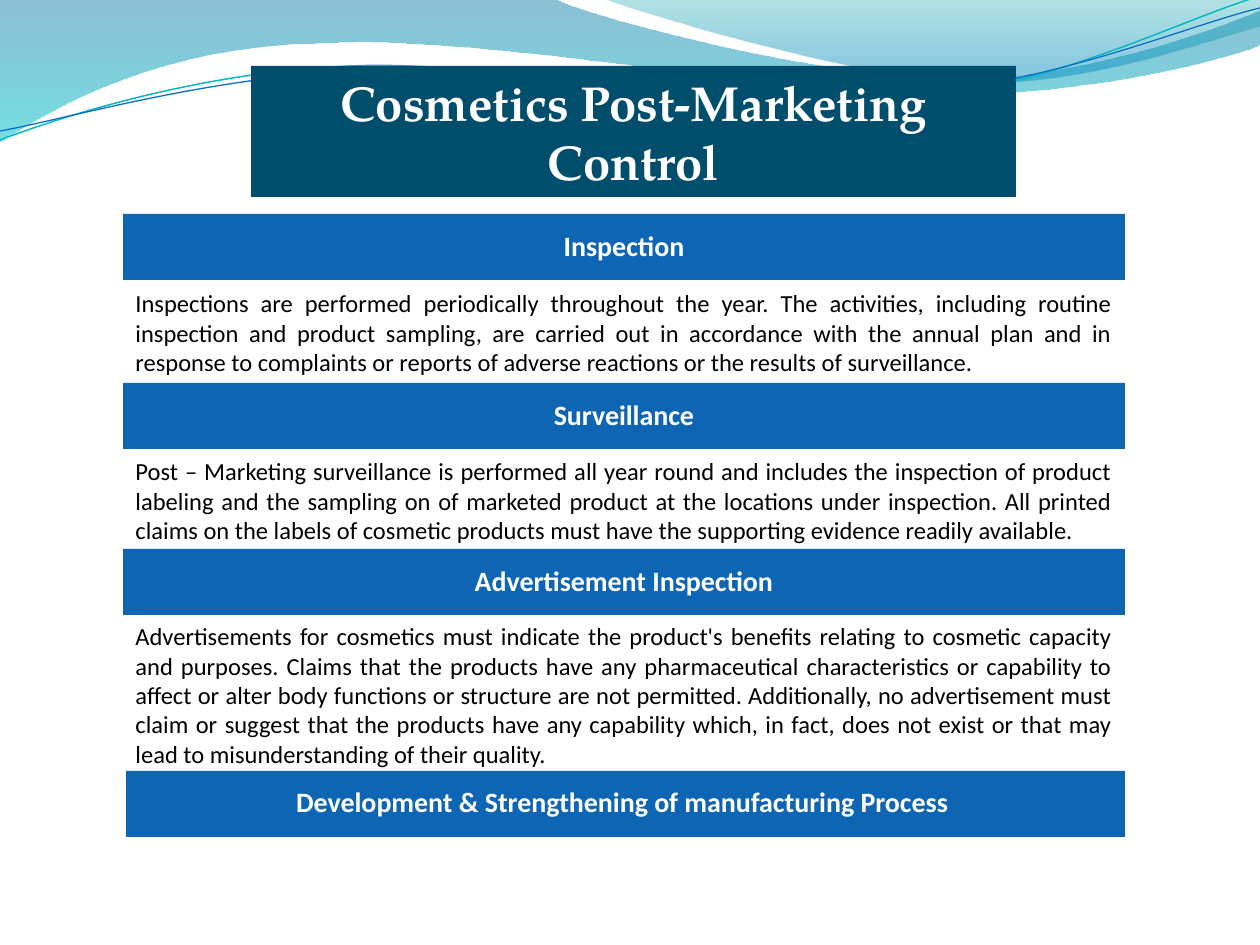
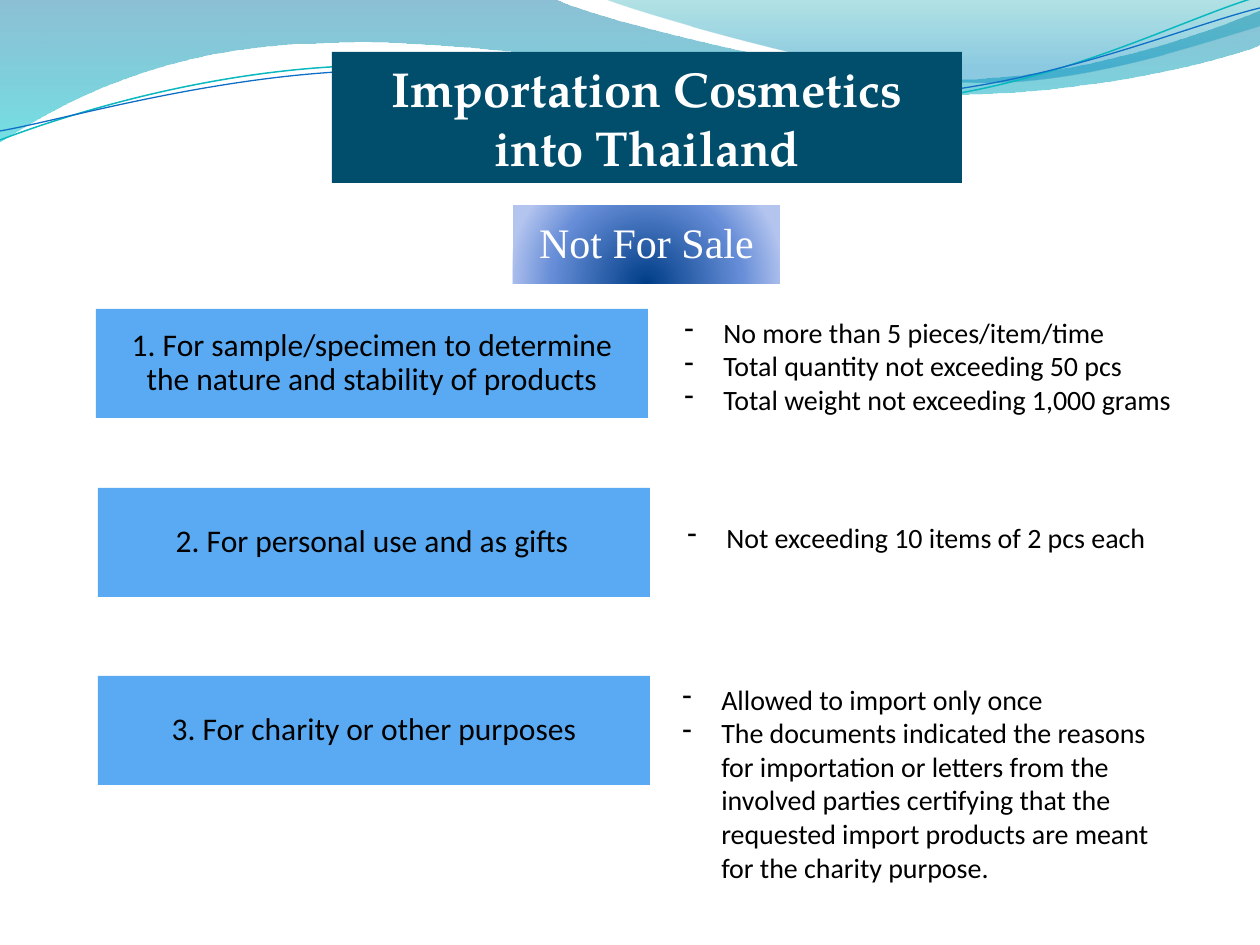
from lxml import etree
from pptx import Presentation
from pptx.dml.color import RGBColor as RGB
from pptx.enum.shapes import MSO_SHAPE as SHAPE
from pptx.enum.text import MSO_ANCHOR as ANCHOR, PP_ALIGN as ALIGN
from pptx.oxml import parse_xml
from pptx.oxml.ns import nsdecls, qn
from pptx.util import Pt

PX = 914400 / 126
WIDTH, HEIGHT = 1260, 945

COLORS = {
    "title": "004E6C", "bar": "0E65B4", "purpose": "59AAF2",
    "white": "FFFFFF", "black": "000000",
    "teal_line": "0AB8BF", "blue_line": "0F6FC6",
}
BODY, TITLE, BADGE = "Calibri", "TeX Gyre Pagella", "Times New Roman"

BANDS = [
    {"points": [(0, 0), (554, -1), (600, 21, 837, 79, 955, 79),
                (1075, 79, 1207, 33, 1260, 11), (1261, 45),
                (1239, 55, 1096, 96, 940, 94), (784, 94, 481, 35, 324, 43),
                (163, 45, 58, 105, -1, 142), (0, 0)],
     "stops": [(0, "0074A1", 45), (100, "00C6CF", 55)]},
    {"points": [(604, -1), (641, 14, 859, 78, 969, 82),
                (1079, 87, 1211, 40, 1260, 26), (1260, 0), (604, -1)],
     "stops": [(0, "00A1A9", 30), (80, "008BBF", 45)]},
]
WAVES = [
    {"points": [(0, 140), (60, 117, 199, 72, 349, 66),
                (498, 59, 747, 112, 898, 101), (1050, 89, 1182, 19, 1257, -3)],
     "color": "teal_line", "width": 0.85},
    {"points": [(0, 131), (59, 121, 207, 77, 357, 71),
                (508, 64, 752, 106, 903, 95), (1053, 84, 1186, 26, 1260, 8)],
     "color": "blue_line", "width": 0.75},
]
LINEAR = '<a:lin ang="5400000" scaled="0"/>'
RADIAL = ('<a:path path="circle"><a:fillToRect l="50000" t="130000" '
          'r="50000" b="-30000"/></a:path>')
BADGE_STOPS = [(0, "003D87", 100), (68, "668DD7", 100), (100, "B3C4EF", 100)]

CONTROL_TITLE = ("Cosmetics Post-Marketing Control", (251, 66, 765, 131))
CONTROLS = [
    ("Inspection", (123, 214, 1002, 66), 0,
     "Inspections are performed periodically throughout the year. The activities, "
     "including routine inspection and product sampling, are carried out in "
     "accordance with the annual plan and in response to complaints or reports of "
     "adverse reactions or the results of surveillance.", (123, 282, 1002, 102)),
    ("Surveillance", (123, 383, 1002, 66), 0,
     "Post – Marketing surveillance is performed all year round and includes the "
     "inspection of product labeling and the sampling on of marketed product at the "
     "locations under inspection. All printed claims on the labels of cosmetic "
     "products must have the supporting evidence readily available.",
     (123, 450, 1002, 102)),
    ("Advertisement Inspection", (123, 549, 1002, 66), 0,
     "Advertisements for cosmetics must indicate the product's benefits relating to "
     "cosmetic capacity and purposes. Claims that the products have any "
     "pharmaceutical characteristics or capability to affect or alter body functions "
     "or structure are not permitted. Additionally, no advertisement must claim or "
     "suggest that the products have any capability which, in fact, does not exist "
     "or that may lead to misunderstanding of their quality.",
     (123, 615, 1002, 161)),
    ("Development & Strengthening of manufacturing Process",
     (126, 771, 999, 66), 3, None, None),
]

IMPORT_TITLE = ("Importation Cosmetics into Thailand", (332, 52, 630, 131))
IMPORT_BADGE = ("Not For Sale", (513, 205, 267, 79))
PURPOSES = [
    ("1. For sample/specimen to determine the nature and stability of products",
     (96, 309, 552, 109), 0,
     ["No more than 5 pieces/item/time", "Total quantity not exceeding 50 pcs",
      "Total weight not exceeding 1,000 grams"], (672, 309, 519, 115)),
    ("2. For personal use and as gifts", (98, 488, 552, 109), 2,
     ["Not exceeding 10 items of 2 pcs each"], (675, 514, 515, 47)),
    ("3. For charity or other purposes", (98, 676, 552, 109), 0,
     ["Allowed to import only once",
      "The documents indicated the reasons for importation or letters from the "
      "involved parties certifying that the requested import products are meant "
      "for the charity purpose."], (670, 676, 515, 217)),
]


def emu(px):
    return round(px * PX)


def rgb(name):
    return RGB.from_string(COLORS[name])


def set_gradient(sp, stops, direction):
    sp.fill.background()
    gs = "".join(
        f'<a:gs pos="{pos * 1000}"><a:srgbClr val="{color}">'
        f'<a:alpha val="{alpha * 1000}"/></a:srgbClr></a:gs>'
        for pos, color, alpha in stops)
    grad = parse_xml(f'<a:gradFill {nsdecls("a")} rotWithShape="1">'
                     f'<a:gsLst>{gs}</a:gsLst>{direction}</a:gradFill>')
    props = sp.element.spPr
    props.replace(props.find(qn("a:noFill")), grad)


def add_outline(slide, points):
    ends = [(emu(seg[-2]), emu(seg[-1])) for seg in points]
    builder = slide.shapes.build_freeform(*ends[0], scale=1.0)
    builder.add_line_segments(ends[1:], close=False)
    sp = builder.convert_to_shape()
    sp.shadow.inherit = False
    lines = list(sp.element.iter(qn("a:lnTo")))
    for line, seg in zip(lines, points[1:]):
        if len(seg) == 6:
            line.tag = qn("a:cubicBezTo")
            line.remove(line[0])
            for x, y in zip(seg[::2], seg[1::2]):
                pt = etree.SubElement(line, qn("a:pt"))
                pt.set("x", str(emu(x) - sp.left))
                pt.set("y", str(emu(y) - sp.top))
    return sp


def add_backdrop(slide):
    for band in BANDS:
        sp = add_outline(slide, band["points"])
        set_gradient(sp, band["stops"], LINEAR)
        sp.line.fill.background()
    for wave in WAVES:
        sp = add_outline(slide, wave["points"])
        sp.fill.background()
        sp.line.color.rgb = rgb(wave["color"])
        sp.line.width = Pt(wave["width"])


def add_text(slide, text, box, fill=None, size=16, font=BODY, color="black",
             bold=False, align=ALIGN.LEFT, anchor=ANCHOR.TOP, inset=None,
             nudge=0, spacing=None, bullet=None):
    place = [emu(v) for v in box]
    if fill:
        sp = slide.shapes.add_shape(SHAPE.RECTANGLE, *place)
        sp.shadow.inherit = False
        sp.fill.solid()
        sp.fill.fore_color.rgb = rgb(fill)
        sp.line.fill.background()
    else:
        sp = slide.shapes.add_textbox(*place)
    tf = sp.text_frame
    tf.word_wrap = True
    tf.vertical_anchor = anchor
    if inset is not None:
        tf.margin_left = tf.margin_top = tf.margin_bottom = emu(inset)
        tf.margin_right = emu(inset + 2 * nudge)
    for i, line in enumerate([text] if isinstance(text, str) else text):
        p = tf.paragraphs[0] if i == 0 else tf.add_paragraph()
        p.alignment = align
        if spacing:
            p.line_spacing = spacing
        if bullet:
            props = p._p.get_or_add_pPr()
            props.set("marL", str(emu(39)))
            props.set("indent", str(-emu(39)))
            etree.SubElement(props, qn("a:buFontTx"))
            etree.SubElement(props, qn("a:buChar")).set("char", bullet)
        r = p.add_run()
        r.text = line
        r.font.name, r.font.size, r.font.bold = font, Pt(size), bold
        r.font.color.rgb = rgb(color)
    return sp


def add_panel(slide, text, box, fill, inset=18, **style):
    return add_text(slide, text, box, fill=fill, align=ALIGN.CENTER,
                    anchor=ANCHOR.MIDDLE, inset=inset, spacing=0.9, **style)


def add_slide(prs, title, box):
    slide = prs.slides.add_slide(prs.slide_layouts[6])
    add_backdrop(slide)
    add_text(slide, title, box, fill="title", size=28, font=TITLE,
             color="white", bold=True, align=ALIGN.CENTER)
    return slide


def build_control(prs):
    slide = add_slide(prs, *CONTROL_TITLE)
    for heading, bar, nudge, _, _ in CONTROLS:
        add_panel(slide, heading, bar, "bar", color="white", bold=True,
                  nudge=nudge)
    for _, _, _, detail, box in CONTROLS:
        if detail:
            add_text(slide, detail, box, size=14, align=ALIGN.JUSTIFY)


def build_import(prs):
    slide = add_slide(prs, *IMPORT_TITLE)
    for purpose, box, nudge, _, _ in PURPOSES:
        add_panel(slide, purpose, box, "purpose", size=18, nudge=nudge)
    for _, _, _, limits, box in PURPOSES:
        add_text(slide, limits, box, bullet="-")
    badge = add_panel(slide, *IMPORT_BADGE, "title", inset=3, size=24,
                      font=BADGE, color="white")
    set_gradient(badge, BADGE_STOPS, RADIAL)


def main():
    prs = Presentation()
    prs.slide_width, prs.slide_height = emu(WIDTH), emu(HEIGHT)
    build_control(prs)
    build_import(prs)
    prs.save("out.pptx")


if __name__ == "__main__":
    main()
